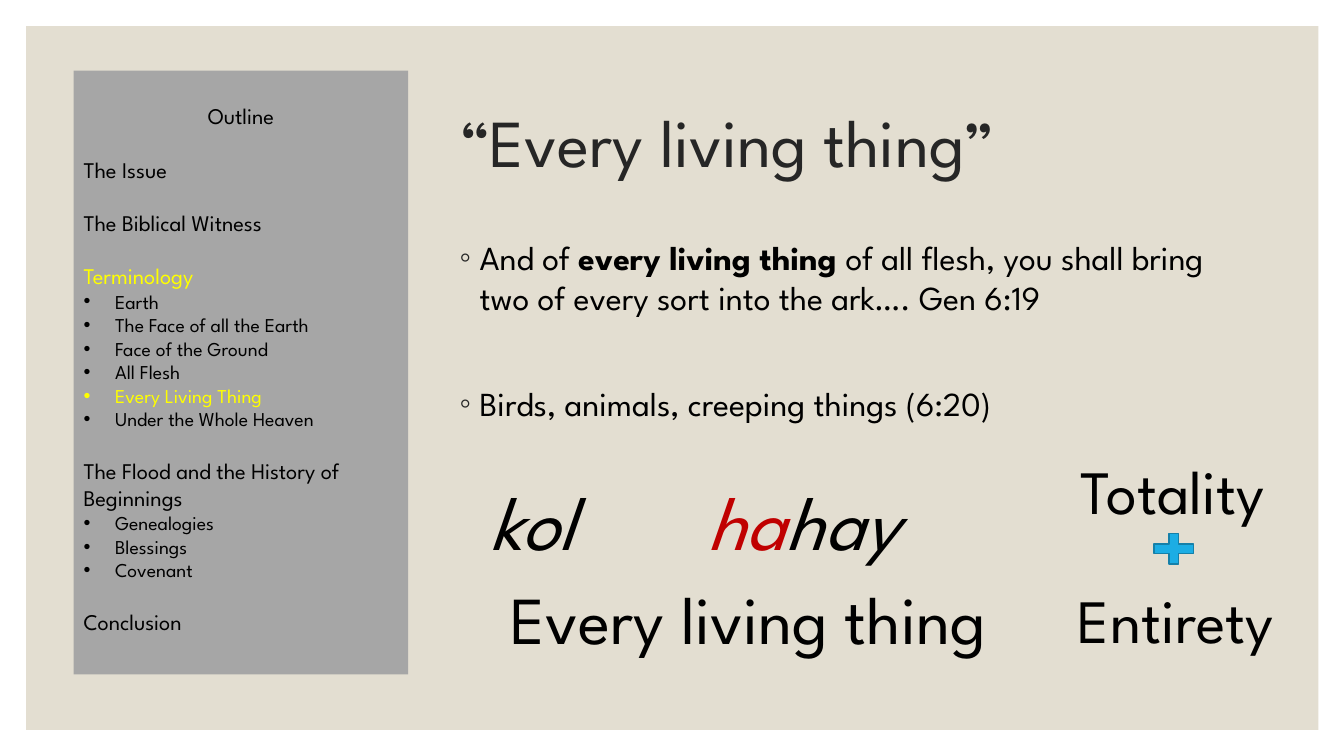
from lxml import etree
from pptx import Presentation
from pptx.dml.color import RGBColor
from pptx.enum import shapes, text
from pptx.oxml.ns import qn
from pptx.util import Pt

FONT = "League Spartan"
BLACK = RGBColor(0, 0, 0)
DARK = RGBColor(0x26, 0x26, 0x26)
SAND = RGBColor(0xE3, 0xDE, 0xD1)
GRAY = RGBColor(0xA6, 0xA6, 0xA6)
YELLOW = RGBColor(0xFF, 0xFF, 0)
RED = RGBColor(0xC0, 0, 0)
BLUE = RGBColor(0x1C, 0xAD, 0xE4)
BLUE_EDGE = RGBColor(0x15, 0x80, 0xA9)

# Outline entries: wording, is a sub-item, colour
OUTLINE = [
    ("The Issue", False, BLACK),
    ("The Biblical Witness", False, BLACK),
    ("Terminology", False, YELLOW),
    ("Earth", True, BLACK),
    ("The Face of all the Earth", True, BLACK),
    ("Face of the Ground", True, BLACK),
    ("All Flesh", True, BLACK),
    ("Every Living Thing", True, YELLOW),
    ("Under the Whole Heaven", True, BLACK),
    ("The Flood and the History of Beginnings", False, BLACK),
    ("Genealogies", True, BLACK),
    ("Blessings", True, BLACK),
    ("Covenant", True, BLACK),
    ("Conclusion", False, BLACK),
]


def add_run(p, words, size, color=BLACK, bold=False, italic=False):
    r = p.add_run()
    r.text = words
    r.font.name, r.font.size = FONT, Pt(size)
    r.font.bold, r.font.italic = bold, italic
    r.font.color.rgb = color


def add_bullet(p, char, color, indent):
    pPr = p._p.get_or_add_pPr()
    pPr.set("marL", str(Pt(indent)))
    pPr.set("indent", str(-Pt(indent)))
    clr = etree.SubElement(pPr, qn("a:buClr"))
    etree.SubElement(clr, qn("a:srgbClr")).set("val", str(color))
    etree.SubElement(pPr, qn("a:buFont")).set("typeface", "Arial")
    etree.SubElement(pPr, qn("a:buChar")).set("char", char)


def add_shape(slide, kind, box, fill, edge=None):
    sp = slide.shapes.add_shape(kind, *map(Pt, box))
    sp.shadow.inherit = False
    sp.fill.solid()
    sp.fill.fore_color.rgb = fill
    if edge is None:
        sp.line.fill.background()
    else:
        sp.line.color.rgb = edge
        sp.line.width = Pt(1)
    return sp


def add_text(slide, box, wrap=True):
    tf = slide.shapes.add_textbox(*map(Pt, box)).text_frame
    tf.word_wrap = wrap
    return tf


def add_label(slide, box, size, parts, italic=False):
    p = add_text(slide, box, wrap=False).paragraphs[0]
    p.alignment = text.PP_ALIGN.CENTER
    for words, color in parts:
        add_run(p, words, size, color, italic=italic)


def add_outline(slide, box):
    sp = add_shape(slide, shapes.MSO_SHAPE.RECTANGLE, box, GRAY)
    tf = sp.text_frame
    tf.word_wrap = True
    tf.vertical_anchor = text.MSO_ANCHOR.TOP
    tf.margin_top = Pt(22.6)
    p = tf.paragraphs[0]
    p.alignment = text.PP_ALIGN.CENTER
    add_run(p, "Outline", 16)
    for words, is_sub, color in OUTLINE:
        p = tf.add_paragraph()
        p.alignment = text.PP_ALIGN.LEFT
        add_run(p, words, 14 if is_sub else 16, color)
        if is_sub:
            add_bullet(p, "•", color, 22.5)
        else:
            p.space_before = Pt(19)


def add_title(slide, box):
    tf = add_text(slide, box)
    tf.vertical_anchor = text.MSO_ANCHOR.MIDDLE
    tf.paragraphs[0].line_spacing = 0.9
    add_run(tf.paragraphs[0], "“Every living thing”", 48, DARK)


def add_body(slide, box):
    tf = add_text(slide, box)
    verse, creatures = tf.paragraphs[0], tf.add_paragraph()
    add_run(verse, "And of ", 24)
    add_run(verse, "every living thing ", 24, bold=True)
    add_run(verse, "of all flesh, you shall bring two of every sort "
                   "into the ark…. Gen 6:19", 24)
    add_run(creatures, "Birds, animals, creeping things (6:20)", 24)
    creatures.space_before = Pt(46.6)
    for p in (verse, creatures):
        add_bullet(p, "◦", DARK, 14.4)


def add_phrase(slide, box):
    x, y, w, h = box
    add_label(slide, (x + 3, y, 88.5, 73), 54, [("kol", BLACK)], italic=True)
    add_label(slide, (x + 147.6, y, 185, 73), 54,
              [("ha", RED), ("hay", BLACK)], italic=True)
    add_label(slide, (x, y + 73, w, h - 73), 48,
              [("Every living thing", BLACK)])


def add_sum(slide, box):
    x, y, w, h = box
    add_label(slide, (x, y, w - 4, 60.5), 44, [("Totality", BLACK)])
    add_label(slide, (x, y + h - 60.5, w, 60.5), 44, [("Entirety", BLACK)])
    add_shape(slide, shapes.MSO_SHAPE.MATH_PLUS,
              (x + 64.7, y + 57.6, 38.2, 29.5), BLUE, BLUE_EDGE)


def main():
    prs = Presentation()
    prs.slide_width, prs.slide_height = Pt(960), Pt(540)
    slide = prs.slides.add_slide(prs.slide_layouts[6])
    # Backdrop
    add_shape(slide, shapes.MSO_SHAPE.RECTANGLE,
              (18.7, 18.7, 923, 502.6), SAND)
    # Title and verse
    add_title(slide, (321.1, 50.4, 586, 108))
    add_body(slide, (321.1, 165.6, 586, 165))
    # Sidebar
    add_outline(slide, (52.6, 50.4, 239, 431.3))
    # Hebrew phrase and its meaning
    add_phrase(slide, (333.4, 335.5, 402.5, 138.5))
    add_sum(slide, (754.6, 319.7, 170.6, 152.6))
    prs.save("out.pptx")


if __name__ == "__main__":
    main()
